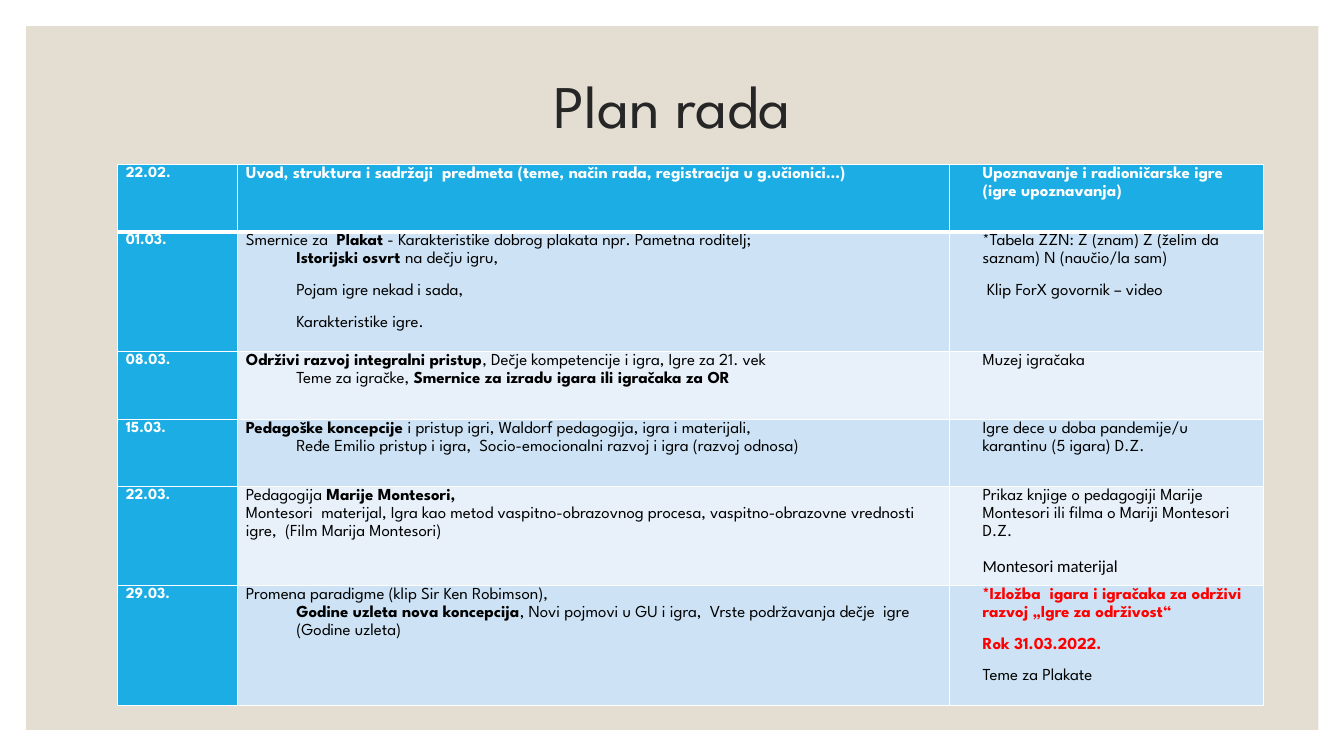
from dataclasses import dataclass
from functools import partial

from lxml.etree import SubElement
from pptx import Presentation
from pptx.dml.color import RGBColor
from pptx.enum.shapes import MSO_SHAPE
from pptx.enum.text import MSO_ANCHOR, PP_ALIGN
from pptx.oxml.ns import qn
from pptx.util import Pt


@dataclass(frozen=True)
class Theme:
    font: str = "League Spartan"
    panel: str = "E3DED1"
    heading: str = "262626"
    accent: str = "1CADE4"
    bands: tuple = ("E8F1FA", "CDE3F5")
    white: str = "FFFFFF"
    black: str = "000000"
    alert: str = "FF0000"
    title_size: float = 43.2
    date_size: float = 11
    body_size: float = 12


@dataclass(frozen=True)
class Line:
    text: str
    indent: float = 0
    after: float = 10
    color: str = Theme.black
    font: str = Theme.font
    size: float = Theme.body_size


lead = partial(Line, after=0)
detail = partial(Line, indent=36)
note = partial(Line, indent=18)
date = partial(Line, color=Theme.white, size=Theme.date_size)
urgent = partial(note, color=Theme.alert)

PLAN = [
    ([date("|22.02.|")],
     [lead("|Uvod, struktura i sadržaji  predmeta (teme, način rada, registracija u g.učionici…)|",
           color=Theme.white)],
     [note("|Upoznavanje i radioničarske igre (igre upoznavanja)|", color=Theme.white)]),
    ([date("|01.03.|")],
     [lead("Smernice za  |Plakat| - Karakteristike dobrog plakata npr. Pametna roditelj;"),
      detail("|Istorijski osvrt |na dečju igru,"),
      detail("Pojam igre nekad i sada,"),
      detail("Karakteristike igre.")],
     [note("*Tabela ZŽN: Z (znam) Ž (želim da saznam) N (naučio/la sam)"),
      note(" Klip ForX govornik – video")]),
    ([date("|08.03.|")],
     [lead("|Održivi razvoj integralni pristup|, Dečje kompetencije i igra, Igre za 21. vek"),
      detail("Teme za igračke, |Smernice za izradu igara ili igračaka za OR|")],
     [note("Muzej igračaka")]),
    ([date("|15.03.|")],
     [lead("|Pedagoške koncepcije |i pristup igri, Waldorf pedagogija, igra i materijali,"),
      detail("Ređe Emilio pristup i igra,  Socio-emocionalni razvoj i igra (razvoj odnosa)")],
     [note("Igre dece u doba pandemije/u karantinu (5 igara) D.Z.")]),
    ([date("|22.03.|")],
     [lead("Pedagogija |Marije Montesori,|"),
      lead("Montesori  materijal, Igra kao metod vaspitno-obrazovnog procesa, "
           "vaspitno-obrazovne vrednosti igre,  (Film Marija Montesori)")],
     [note("Prikaz knjige o pedagogiji Marije Montesori ili filma o Mariji Montesori D.Z."),
      note("Montesori materijal", font="Calibri")]),
    ([date("|29.03.|")],
     [lead("Promena paradigme (klip Sir Ken Robimson),"),
      detail("|Godine uzleta nova koncepcija|, Novi pojmovi u GU i igra,  "
             "Vrste podržavanja dečje  igre  (Godine uzleta)")],
     [urgent("|*Izložba  igara i igračaka za održivi razvoj „Igre za održivost“|"),
      urgent("|Rok 31.03.2022.|"),
      note("Teme za Plakate")]),
]


class SlideBuilder:
    """Draws themed elements on one slide, with all lengths in points."""

    def __init__(self, slide, theme):
        self.slide = slide
        self.theme = theme

    def panel(self, left, top, width, height):
        panel = self.slide.shapes.add_shape(
            MSO_SHAPE.RECTANGLE, Pt(left), Pt(top), Pt(width), Pt(height))
        panel.shadow.inherit = False
        panel.fill.solid()
        panel.fill.fore_color.rgb = RGBColor.from_string(self.theme.panel)
        panel.line.fill.background()
        self.slide.shapes._spTree.insert(2, panel._element)

    def title(self, text, left, top, width, height):
        title = self.slide.shapes.title
        title.left, title.top = Pt(left), Pt(top)
        title.width, title.height = Pt(width), Pt(height)
        title.text_frame.text = text
        title.text_frame.vertical_anchor = MSO_ANCHOR.MIDDLE
        heading = title.text_frame.paragraphs[0]
        heading.alignment = PP_ALIGN.CENTER
        heading.line_spacing = 0.9
        self.style(heading.runs[0], self.theme.title_size,
                   self.theme.heading, self.theme.font, False)

    def schedule(self, plan, left, top, widths, heights):
        table = self.slide.shapes.add_table(
            len(plan), len(widths), Pt(left), Pt(top),
            Pt(sum(widths)), Pt(sum(heights))).table
        table.first_row = table.horz_banding = False
        for column, width in zip(table.columns, widths):
            column.width = Pt(width)
        for row, height in zip(table.rows, heights):
            row.height = Pt(height)
        for r, entry in enumerate(plan):
            for c, lines in enumerate(entry):
                cell = table.cell(r, c)
                self.borders(cell, top=3 if r == 1 else 1, bottom=3 if r == 0 else 1)
                cell.fill.solid()
                cell.fill.fore_color.rgb = RGBColor.from_string(
                    self.theme.accent if r == 0 or c == 0 else self.theme.bands[r % 2])
                self.fill_cell(cell, lines)

    def borders(self, cell, top, bottom):
        properties = cell._tc.get_or_add_tcPr()
        for side, width in (("L", 1), ("R", 1), ("T", top), ("B", bottom)):
            border = SubElement(properties, qn(f"a:ln{side}"), w=str(Pt(width)))
            fill = SubElement(border, qn("a:solidFill"))
            SubElement(fill, qn("a:srgbClr"), val=self.theme.white)

    def fill_cell(self, cell, lines):
        cell.margin_left = cell.margin_right = Pt(5.76)
        cell.margin_top = cell.margin_bottom = 0
        cell.vertical_anchor = MSO_ANCHOR.TOP
        cell.text_frame.text = "\n".join(line.text for line in lines)
        for paragraph, line in zip(cell.text_frame.paragraphs, lines):
            paragraph.line_spacing = 1.15
            paragraph.space_after = Pt(line.after)
            paragraph._p.get_or_add_pPr().set("marL", str(Pt(line.indent)))
            paragraph.text = ""
            for i, part in enumerate(line.text.split("|")):
                if part:
                    run = paragraph.add_run()
                    run.text = part
                    self.style(run, line.size, line.color, line.font, i % 2 == 1)

    def style(self, run, size, color, font, bold):
        run.font.size = Pt(size)
        run.font.color.rgb = RGBColor.from_string(color)
        run.font.name = font
        run.font.bold = bold


def main():
    presentation = Presentation()
    presentation.slide_width, presentation.slide_height = Pt(960), Pt(540)
    slide = presentation.slides.add_slide(presentation.slide_layouts[5])
    builder = SlideBuilder(slide, Theme())
    builder.panel(18.7, 18.7, 923, 502.6)
    builder.title("Plan rada", 84.2, 50.4, 792, 55.4)
    builder.schedule(PLAN, 84.2, 117.4, widths=(85.7, 508.3, 224.6),
                     heights=(48.2, 85.7, 48.2, 48.2, 70.6, 85.7))
    presentation.save("out.pptx")


if __name__ == "__main__":
    main()
